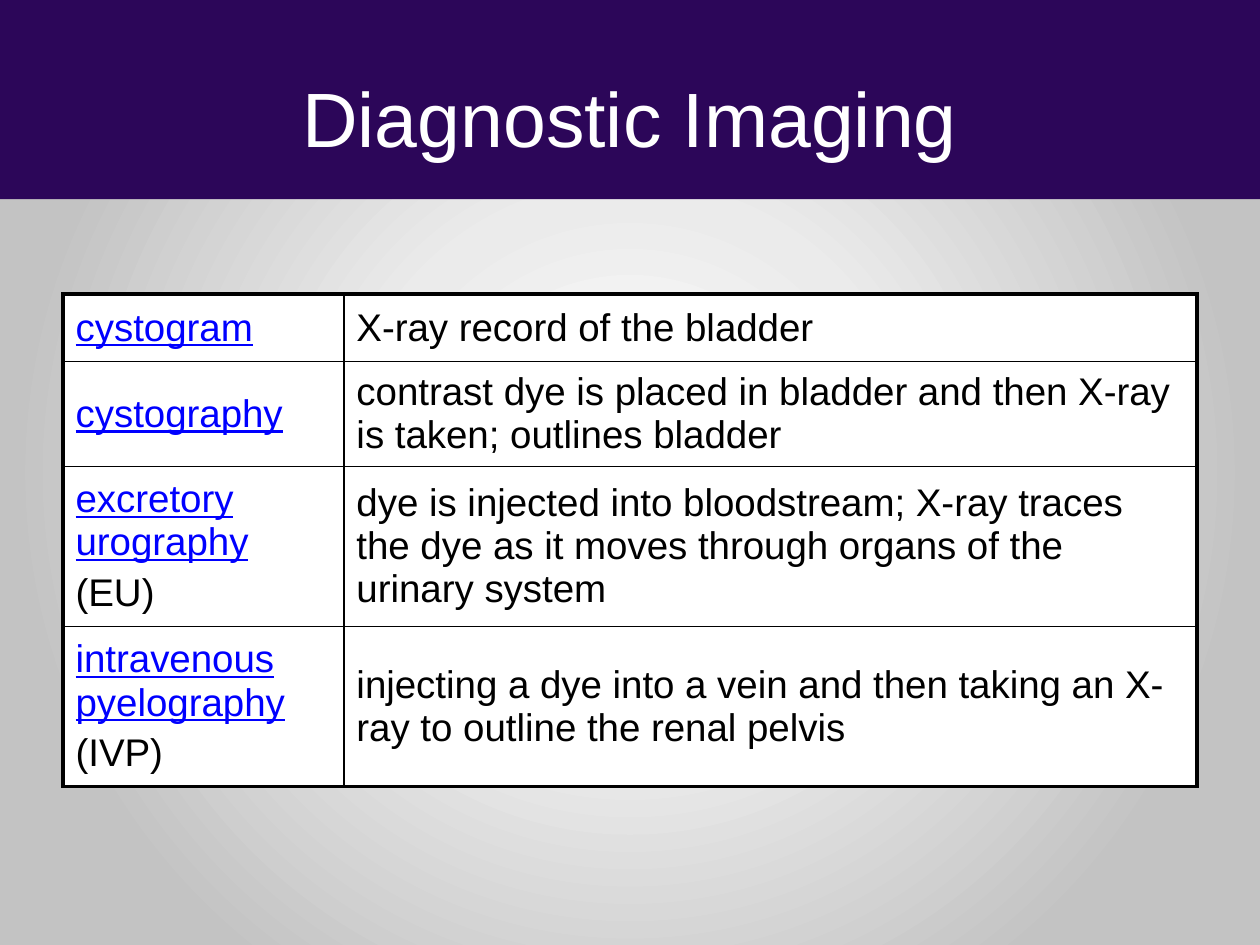
import lxml.etree
import pptx
import pptx.dml.color
import pptx.enum.shapes
import pptx.enum.text
import pptx.oxml
import pptx.oxml.ns
import pptx.util

Pt = pptx.util.Pt
COLORS = {
    "band": "2C0659",
    "title": "FFFFFF",
    "cell": "FFFFFF",
    "term": "0000FF",
    "text": "000000",
    "border": "000000",
    "center": "FFFFFF",
    "middle": "EBEBEB",
    "edge": "C3C3C3",
}
FONT = "Arial"
GRADIENT_STOPS = [(2, "center"), (35, "middle"), (79, "edge")]
COLUMN_WIDTHS = [160.5, 487.5]
ROW_HEIGHTS = [38.5, 60, 91.5, 91.5]
OUTER_WIDTH, INNER_WIDTH = 2.25, 1
ROWS = [
    ("cystogram", None, "X-ray record of the bladder"),
    ("cystography", None,
     "contrast dye is placed in bladder and then X-ray is taken; outlines bladder"),
    ("excretory urography", "(EU)",
     "dye is injected into bloodstream; X-ray traces the dye as it moves through "
     "organs of the urinary system"),
    ("intravenous pyelography", "(IVP)",
     "injecting a dye into a vein and then taking an X-ray to outline the renal pelvis"),
]


def rgb(name):
    """Return the named colour."""
    return pptx.dml.color.RGBColor.from_string(COLORS[name])


def apply_format(target, values):
    """Set each attribute of the target from a dict."""
    for name, value in values.items():
        setattr(target, name, value)


def write_paragraph(paragraph, text, color, size, **values):
    """Write one run of text with its font settings."""
    run = paragraph.add_run()
    run.text = text
    apply_format(run.font, {"name": FONT, "size": Pt(size), **values})
    run.font.color.rgb = rgb(color)


def set_background(slide):
    """Fill the slide with a circular gradient from its centre."""
    slide.background.fill.gradient()
    gradient = slide.element.find(".//" + pptx.oxml.ns.qn("a:gradFill"))
    for child in list(gradient):
        gradient.remove(child)
    stops = "".join(
        f'<a:gs pos="{position * 1000}"><a:srgbClr val="{COLORS[name]}"/></a:gs>'
        for position, name in GRADIENT_STOPS)
    source = pptx.oxml.parse_xml(
        f'<a:gradFill {pptx.oxml.ns.nsdecls("a")}><a:gsLst>{stops}</a:gsLst>'
        '<a:path path="circle"><a:fillToRect l="50000" t="50000" r="50000" b="50000"/>'
        '</a:path></a:gradFill>')
    for child in list(source):
        gradient.append(child)


def add_header(slide, left, top, width, height, title):
    """Draw the coloured band with its centred title."""
    band = slide.shapes.add_shape(
        pptx.enum.shapes.MSO_SHAPE.RECTANGLE, Pt(left), Pt(top), Pt(width), Pt(height))
    band.shadow.inherit = False
    band.fill.solid()
    band.fill.fore_color.rgb = rgb("band")
    band.line.fill.background()
    box = slide.shapes.add_textbox(
        Pt(left + 36), Pt(top + 21.6), Pt(width - 72), Pt(90))
    apply_format(box.text_frame, {
        "word_wrap": True, "vertical_anchor": pptx.enum.text.MSO_ANCHOR.MIDDLE})
    paragraph = box.text_frame.paragraphs[0]
    paragraph.alignment = pptx.enum.text.PP_ALIGN.CENTER
    write_paragraph(paragraph, title, "title", 44)


def set_borders(cell, widths):
    """Draw the cell's borders, given widths keyed by side."""
    properties = cell._tc.get_or_add_tcPr()
    for side, width in widths.items():
        properties.append(pptx.oxml.parse_xml(
            f'<a:ln{side} {pptx.oxml.ns.nsdecls("a")} w="{Pt(width)}"><a:solidFill>'
            f'<a:srgbClr val="{COLORS["border"]}"/></a:solidFill></a:ln{side}>'))


def fill_cell(cell, lines):
    """Fill a cell and write its lines, given as text, colour and underline."""
    apply_format(cell, {
        "vertical_anchor": pptx.enum.text.MSO_ANCHOR.MIDDLE,
        "margin_left": Pt(7.2), "margin_right": Pt(7.2),
        "margin_top": Pt(3.6), "margin_bottom": Pt(3.6)})
    cell.fill.solid()
    cell.fill.fore_color.rgb = rgb("cell")
    for index, (text, color, underline) in enumerate(lines):
        frame = cell.text_frame
        paragraph = frame.add_paragraph() if index else frame.paragraphs[0]
        paragraph.space_before = Pt(4.4)
        write_paragraph(paragraph, text, color, 22, underline=underline)


def add_terms_table(slide, left, top):
    """Draw the table of terms and definitions."""
    table = slide.shapes.add_table(
        len(ROWS), len(COLUMN_WIDTHS), Pt(left), Pt(top),
        Pt(sum(COLUMN_WIDTHS)), Pt(sum(ROW_HEIGHTS))).table
    apply_format(table, {"first_row": False, "horz_banding": False})
    for column, width in zip(table.columns, COLUMN_WIDTHS):
        column.width = Pt(width)
    for row, height in zip(table.rows, ROW_HEIGHTS):
        row.height = Pt(height)
    last_row, last_column = len(ROWS) - 1, len(COLUMN_WIDTHS) - 1
    for row_index, (term, abbreviation, definition) in enumerate(ROWS):
        term_lines = [(term, "term", True)]
        if abbreviation:
            term_lines.append((abbreviation, "text", False))
        for column_index, lines in enumerate([term_lines, [(definition, "text", False)]]):
            outer = {"L": column_index == 0, "R": column_index == last_column,
                     "T": row_index == 0, "B": row_index == last_row}
            cell = table.cell(row_index, column_index)
            set_borders(cell, {side: OUTER_WIDTH if is_outer else INNER_WIDTH
                               for side, is_outer in outer.items()})
            fill_cell(cell, lines)


def main():
    """Build and save the slide."""
    presentation = pptx.Presentation()
    apply_format(presentation, {"slide_width": Pt(720), "slide_height": Pt(540)})
    slide = presentation.slides.add_slide(presentation.slide_layouts[6])
    set_background(slide)
    add_header(slide, 0, 0, 720, 113.75, "Diagnostic Imaging")
    add_terms_table(slide, 36, 168)
    presentation.save("out.pptx")


if __name__ == "__main__":
    main()
